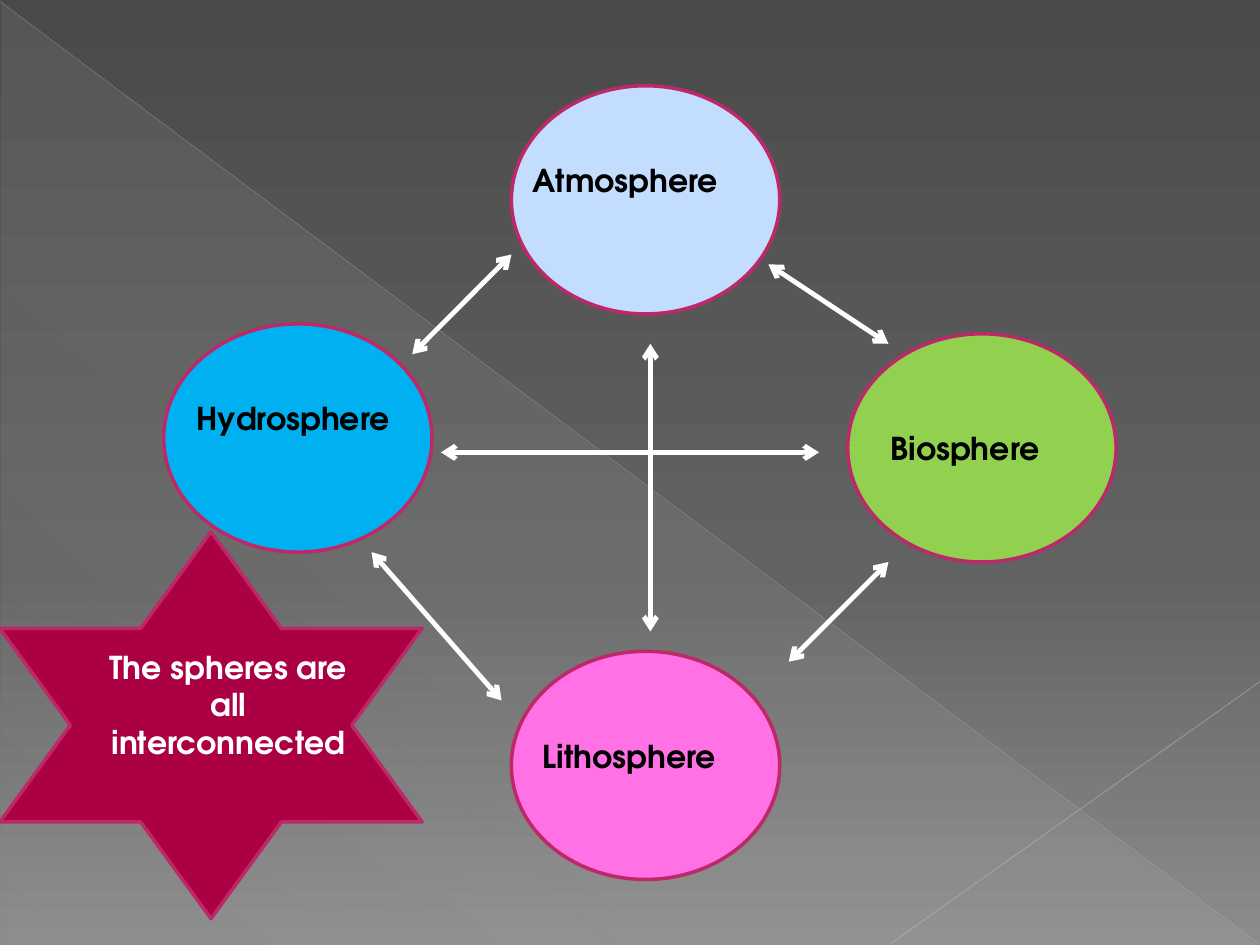
from lxml import etree
from pptx import Presentation
from pptx.dml.color import RGBColor
from pptx.enum import shapes, text
from pptx.oxml.ns import qn
from pptx.util import Cm, Pt

FONT = "TeX Gyre Adventor"
BLACK = RGBColor(0x00, 0x00, 0x00)
WHITE = RGBColor(0xFF, 0xFF, 0xFF)
OUTLINE = RGBColor(0xBD, 0x29, 0x68)
CRIMSON = RGBColor(0xAB, 0x00, 0x43)
SKY = RGBColor(0xC3, 0xDD, 0xFF)
BLUE = RGBColor(0x00, 0xB0, 0xF0)
PINK = RGBColor(0xFF, 0x71, 0xE5)
GREEN = RGBColor(0x92, 0xD0, 0x50)
DARK_GREY = RGBColor(0x4A, 0x4A, 0x4A)
MID_GREY = RGBColor(0x62, 0x62, 0x62)
LIGHT_GREY = RGBColor(0x8C, 0x8C, 0x8C)
SHEEN = RGBColor(0xD2, 0xD2, 0xD2)
DIAGONAL_GREY = RGBColor(0xBF, 0xBF, 0xBF)
CORNER_GREY = RGBColor(0xC6, 0xC6, 0xC6)

SPHERE_SIZE = (5.41, 4.6)
LABEL_HEIGHT = 1.02

# name, fill, circle left and top, label left, top and width (cm)
SPHERES = [
    ("Atmosphere", SKY, (10.31, 1.73), (10.49, 3.12, 4.6)),
    ("Hydrosphere", BLUE, (3.3, 6.53), (3.71, 7.92, 4.6)),
    ("Lithosphere", PINK, (10.31, 13.13), (10.69, 14.73, 4.8)),
    ("Biosphere", GREEN, (17.09, 6.73), (17.7, 8.53, 5.0)),
]

# start and end of each double-headed arrow (cm)
ARROWS = [
    ((13.11, 12.73), (13.11, 6.93)),
    ((8.89, 9.12), (16.51, 9.12)),
    ((8.31, 7.14), (10.31, 5.13)),
    ((17.91, 6.93), (15.49, 5.33)),
    ((10.11, 14.12), (7.49, 11.13)),
    ((15.9, 13.34), (17.91, 11.33)),
]


def set_alpha(color_element, percent):
    alpha = etree.SubElement(color_element, qn("a:alpha"))
    alpha.set("val", str(percent * 1000))


def set_gradient(fill, parent, stops, angle):
    """Fill with (position, colour, opacity) stops; angle is clockwise."""
    fill.gradient()
    fill.gradient_angle = 360 - angle
    stop_list = next(parent.iter(qn("a:gsLst")))
    for old_stop in list(stop_list):
        stop_list.remove(old_stop)
    for position, color, opacity in stops:
        stop = etree.SubElement(stop_list, qn("a:gs"), pos=str(position * 1000))
        color_element = etree.SubElement(stop, qn("a:srgbClr"), val=str(color))
        if opacity < 100:
            set_alpha(color_element, opacity)


def add_filled_shape(slide, kind, position, size, color):
    shape = slide.shapes.add_shape(kind, *map(Cm, position + size))
    shape.shadow.inherit = False
    shape.fill.solid()
    shape.fill.fore_color.rgb = color
    shape.line.color.rgb = OUTLINE
    shape.line.width = Pt(2)


def add_label(slide, wording, box, color, alignment=text.PP_ALIGN.LEFT):
    label = slide.shapes.add_textbox(*map(Cm, box))
    frame = label.text_frame
    frame.word_wrap = True
    frame.auto_size = text.MSO_AUTO_SIZE.SHAPE_TO_FIT_TEXT
    paragraph = frame.paragraphs[0]
    paragraph.alignment = alignment
    run = paragraph.add_run()
    run.text = wording
    run.font.name = FONT
    run.font.size = Pt(18)
    run.font.bold = True
    run.font.color.rgb = color


def add_line(slide, start, end, color, width):
    line = slide.shapes.add_connector(
        shapes.MSO_CONNECTOR.STRAIGHT, *map(Cm, start + end))
    line.line.color.rgb = color
    line.line.width = Pt(width)
    etree.SubElement(line._element.spPr, qn("a:effectLst"))
    return line


def add_double_arrow(slide, start, end):
    arrow = add_line(slide, start, end, WHITE, 2.75)
    outline = arrow.line._get_or_add_ln()
    for end_tag in ("a:headEnd", "a:tailEnd"):
        etree.SubElement(outline, qn(end_tag), type="arrow")


def add_faint_line(slide, start, end, color, width, opacity):
    line = add_line(slide, start, end, color, width)
    set_alpha(next(line._element.spPr.iter(qn("a:srgbClr"))), opacity)


def add_backdrop(slide):
    set_gradient(
        slide.background.fill, slide._element,
        [(0, DARK_GREY, 100), (60, MID_GREY, 100), (100, LIGHT_GREY, 100)], 90)
    triangle = slide.shapes.add_shape(
        shapes.MSO_SHAPE.RIGHT_TRIANGLE, Cm(0.03), Cm(0.05), Cm(25.35), Cm(19))
    triangle.shadow.inherit = False
    triangle.line.fill.background()
    set_gradient(
        triangle.fill, triangle._element,
        [(0, SHEEN, 10), (70, SHEEN, 8), (100, SHEEN, 1)], 133)
    add_faint_line(slide, (0, 0.03), (25.37, 19.02), DIAGONAL_GREY, 0.39, 35)
    add_faint_line(slide, (25.4, 13.74), (17.96, 19.02), CORNER_GREY, 0.47, 45)


def main():
    presentation = Presentation()
    presentation.slide_width = Cm(25.4)
    presentation.slide_height = Cm(19.05)
    slide = presentation.slides.add_slide(presentation.slide_layouts[6])

    add_backdrop(slide)
    for _, color, position, _ in SPHERES:
        add_filled_shape(
            slide, shapes.MSO_SHAPE.OVAL, position, SPHERE_SIZE, color)
    for name, _, _, (left, top, width) in SPHERES:
        add_label(slide, name, (left, top, width, LABEL_HEIGHT), BLACK)
    for start, end in ARROWS:
        add_double_arrow(slide, start, end)

    add_filled_shape(
        slide, shapes.MSO_SHAPE.STAR_6_POINT, (0, 10.72), (8.51, 7.8), CRIMSON)
    add_label(
        slide, "The spheres are all interconnected", (1.9, 12.93, 5.41, 2.57),
        WHITE, text.PP_ALIGN.CENTER)

    presentation.save("out.pptx")


if __name__ == "__main__":
    main()
